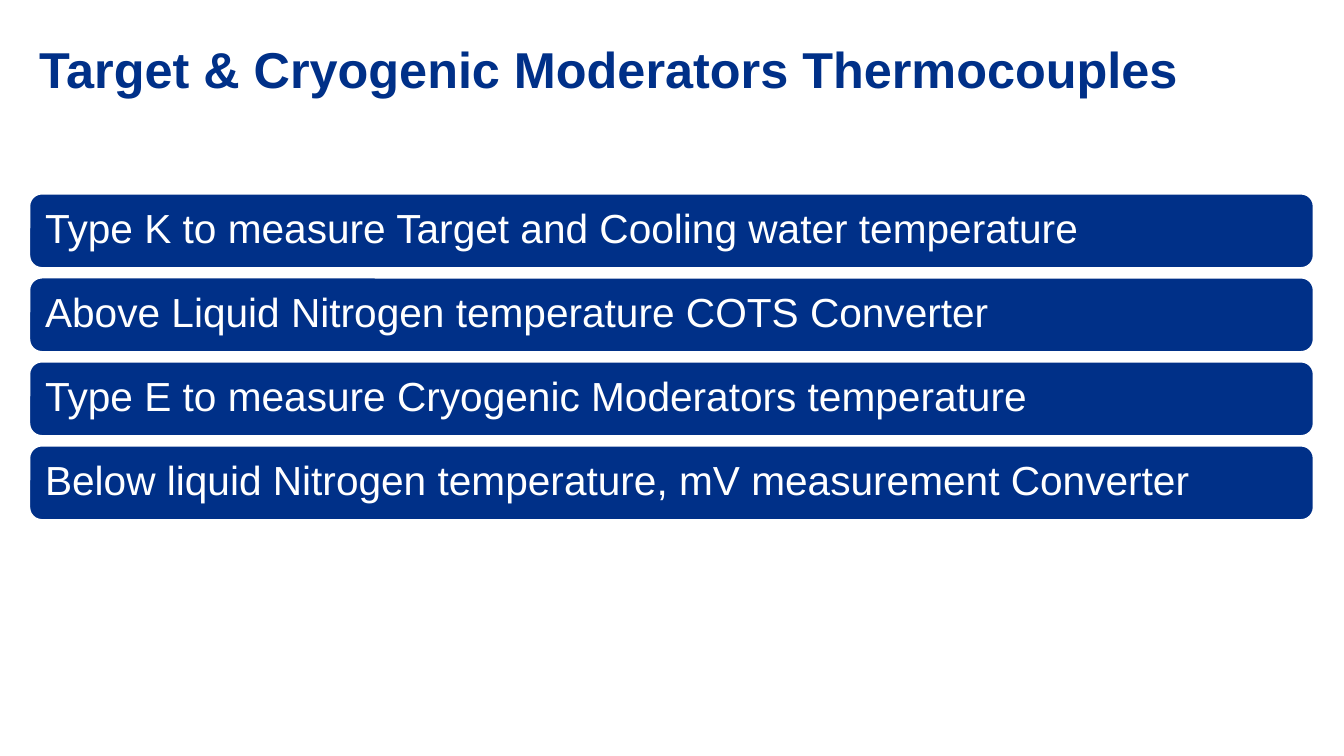
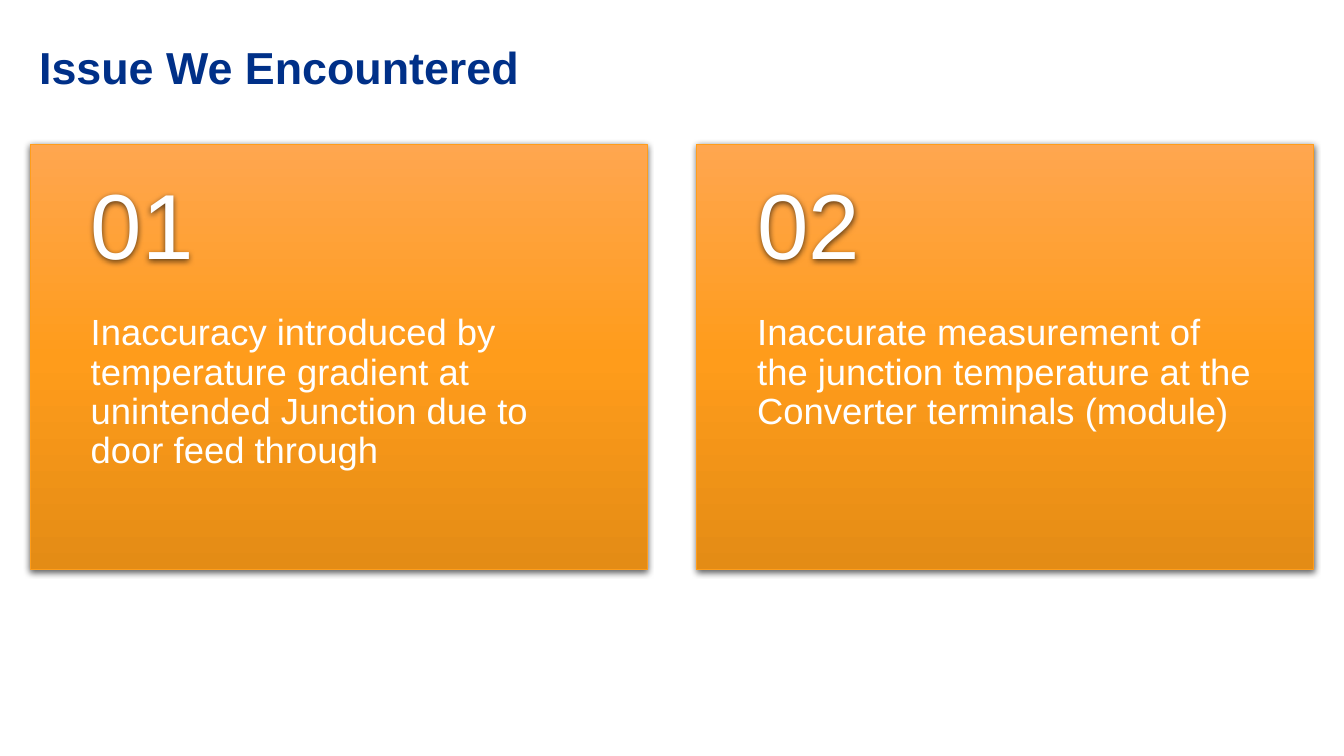
import copy

import pptx
import pptx.dml.color
import pptx.enum.shapes
import pptx.enum.text
import pptx.oxml
import pptx.oxml.ns
import pptx.util
from pptx.util import Inches

RGBColor = pptx.dml.color.RGBColor
MSO_SHAPE = pptx.enum.shapes.MSO_SHAPE
MSO_ANCHOR = pptx.enum.text.MSO_ANCHOR

NAVY = RGBColor(0x00, 0x30, 0x88)
WHITE = RGBColor(0xFF, 0xFF, 0xFF)
ORANGE_LINE = RGBColor(0xFF, 0x9D, 0x1B)
ORANGE_STOPS = [
    (0, RGBColor(0xFF, 0xA6, 0x4F)),
    (0.5, RGBColor(0xFF, 0x9C, 0x1B)),
    (1, RGBColor(0xE4, 0x8C, 0x15)),
]
FONT = "Arial"
LEFT, WIDTH = 0.29, 12.74

SHADOW = pptx.oxml.parse_xml(
    f'<a:outerShdw {pptx.oxml.ns.nsdecls("a")} blurRad="57150" dist="19050" '
    'dir="5400000" algn="ctr" rotWithShape="0"><a:srgbClr val="000000">'
    '<a:alpha val="63000"/></a:srgbClr></a:outerShdw>'
)


def write_text(shape, text, size, color, insets, anchor=MSO_ANCHOR.TOP, bold=False):
    frame = shape.text_frame
    frame.word_wrap = True
    frame.vertical_anchor = anchor
    frame.margin_left, frame.margin_top, frame.margin_right, frame.margin_bottom = (
        Inches(inset) for inset in insets
    )
    frame.text = text
    paragraph = frame.paragraphs[0]
    paragraph.alignment = pptx.enum.text.PP_ALIGN.LEFT
    paragraph.line_spacing = 0.9
    font = paragraph.runs[0].font
    font.name = FONT
    font.size = pptx.util.Pt(size)
    font.bold = bold
    font.color.rgb = color


def add_soft_shadow(shape):
    shape.shadow.inherit = False
    properties = shape._element.spPr
    effects = properties.find(pptx.oxml.ns.qn("a:effectLst"))
    effects.append(copy.deepcopy(SHADOW))


presentation = pptx.Presentation()
presentation.slide_width = Inches(13.33)
presentation.slide_height = Inches(7.5)

# Slides with their shared title style
slides = []
for title, size in [
    ("Target & Cryogenic Moderators Thermocouples", 36),
    ("Issue We Encountered", 32),
]:
    slide = presentation.slides.add_slide(presentation.slide_layouts[6])
    title_box = slide.shapes.add_textbox(
        Inches(LEFT), Inches(0.4), Inches(WIDTH), Inches(0.51)
    )
    write_text(title_box, title, size, NAVY, (0.1, 0.05, 0.1, 0.05), bold=True)
    slides.append(slide)
thermocouple_slide, issue_slide = slides

# Thermocouple bars
BARS = [
    "Type K to measure Target and Cooling water temperature",
    "Above Liquid Nitrogen temperature COTS Converter",
    "Type E to measure Cryogenic Moderators temperature",
    "Below liquid Nitrogen temperature, mV measurement Converter",
]
FIRST_TOP, LAST_TOP, BAR_HEIGHT = 1.92, 4.42, 0.74
bar_step = (LAST_TOP - FIRST_TOP) / (len(BARS) - 1)
for index, text in enumerate(BARS):
    bar = thermocouple_slide.shapes.add_shape(
        MSO_SHAPE.ROUNDED_RECTANGLE,
        Inches(LEFT), Inches(FIRST_TOP + index * bar_step),
        Inches(WIDTH), Inches(BAR_HEIGHT),
    )
    bar.adjustments[0] = 0.17
    bar.shadow.inherit = False
    bar.fill.solid()
    bar.fill.fore_color.rgb = NAVY
    bar.line.color.rgb = WHITE
    bar.line.width = pptx.util.Pt(1.5)
    write_text(bar, text, 29, WHITE, (0.12,) * 4, MSO_ANCHOR.MIDDLE)

# Numbered issue cards
ISSUES = [
    "Inaccuracy introduced by temperature gradient at unintended Junction "
    "due to door feed through",
    "Inaccurate measurement of the junction temperature at the "
    "Converter terminals (module)",
]
CARD_LEFT, CARD_TOP, CARD_WIDTH, CARD_HEIGHT = 0.3, 1.43, 6.12, 4.22
CARD_GAP, NUMBER_HEIGHT = 0.49, 1.69
for index, text in enumerate(ISSUES):
    left = Inches(CARD_LEFT + index * (CARD_WIDTH + CARD_GAP))
    card = issue_slide.shapes.add_shape(
        MSO_SHAPE.RECTANGLE,
        left, Inches(CARD_TOP), Inches(CARD_WIDTH), Inches(CARD_HEIGHT),
    )
    card.fill.gradient()
    card.fill.gradient_angle = 270
    # The default gradient has two stops; a third is added before colouring
    first_stop = card._element.spPr.find(".//" + pptx.oxml.ns.qn("a:gs"))
    first_stop.addnext(copy.deepcopy(first_stop))
    for stop, (position, color) in zip(card.fill.gradient_stops, ORANGE_STOPS):
        stop.position = position
        stop.color.rgb = color
    card.line.color.rgb = ORANGE_LINE
    card.line.width = pptx.util.Pt(0.5)
    add_soft_shadow(card)
    write_text(card, text, 26, WHITE, (0.6, NUMBER_HEIGHT, 0.6, 0.36))

    number = issue_slide.shapes.add_textbox(
        left, Inches(CARD_TOP), Inches(CARD_WIDTH), Inches(NUMBER_HEIGHT)
    )
    add_soft_shadow(number)
    write_text(number, f"{index + 1:02}", 66, WHITE, (0.6, 0.18, 0.6, 0.18),
               MSO_ANCHOR.MIDDLE)

presentation.save("out.pptx")
